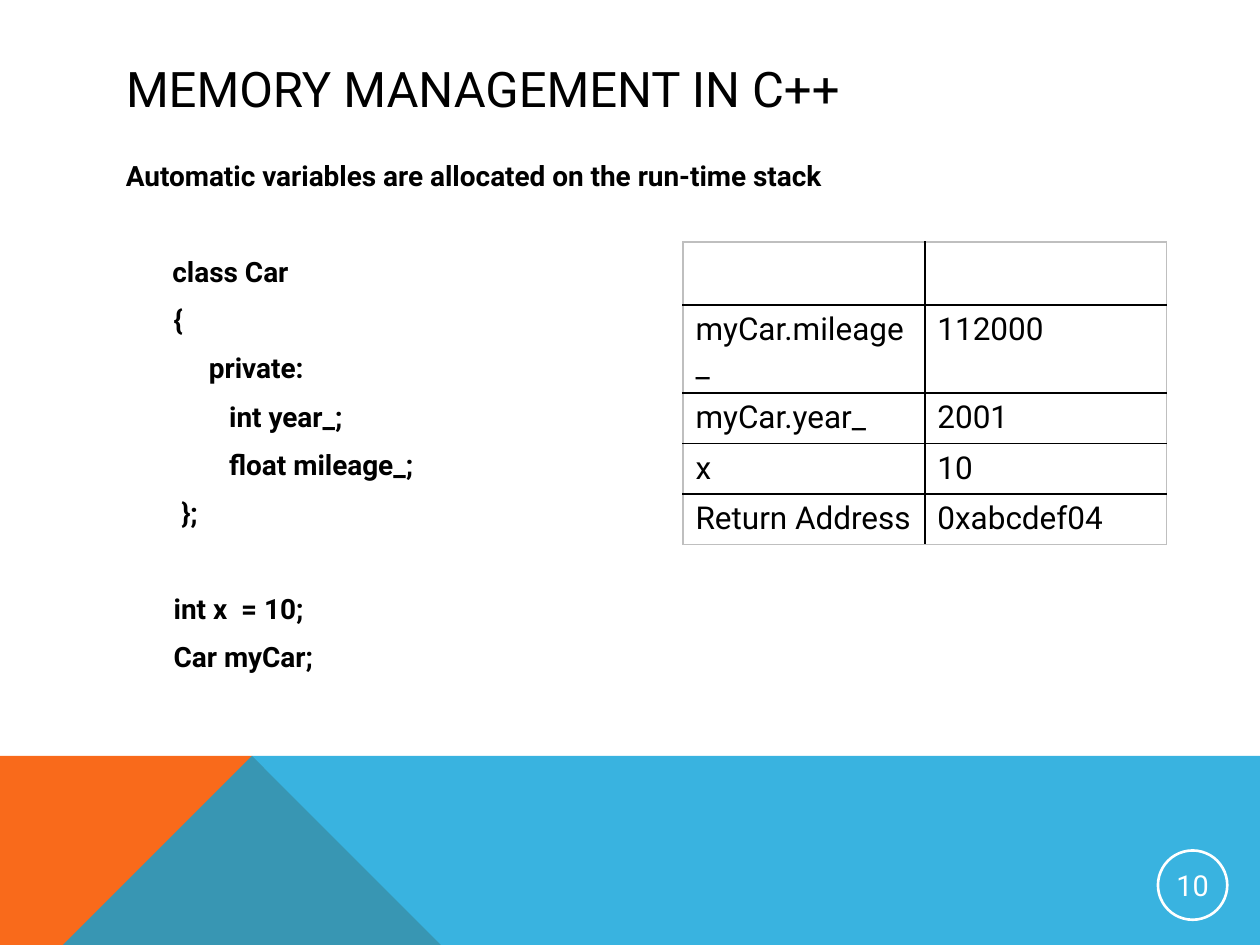
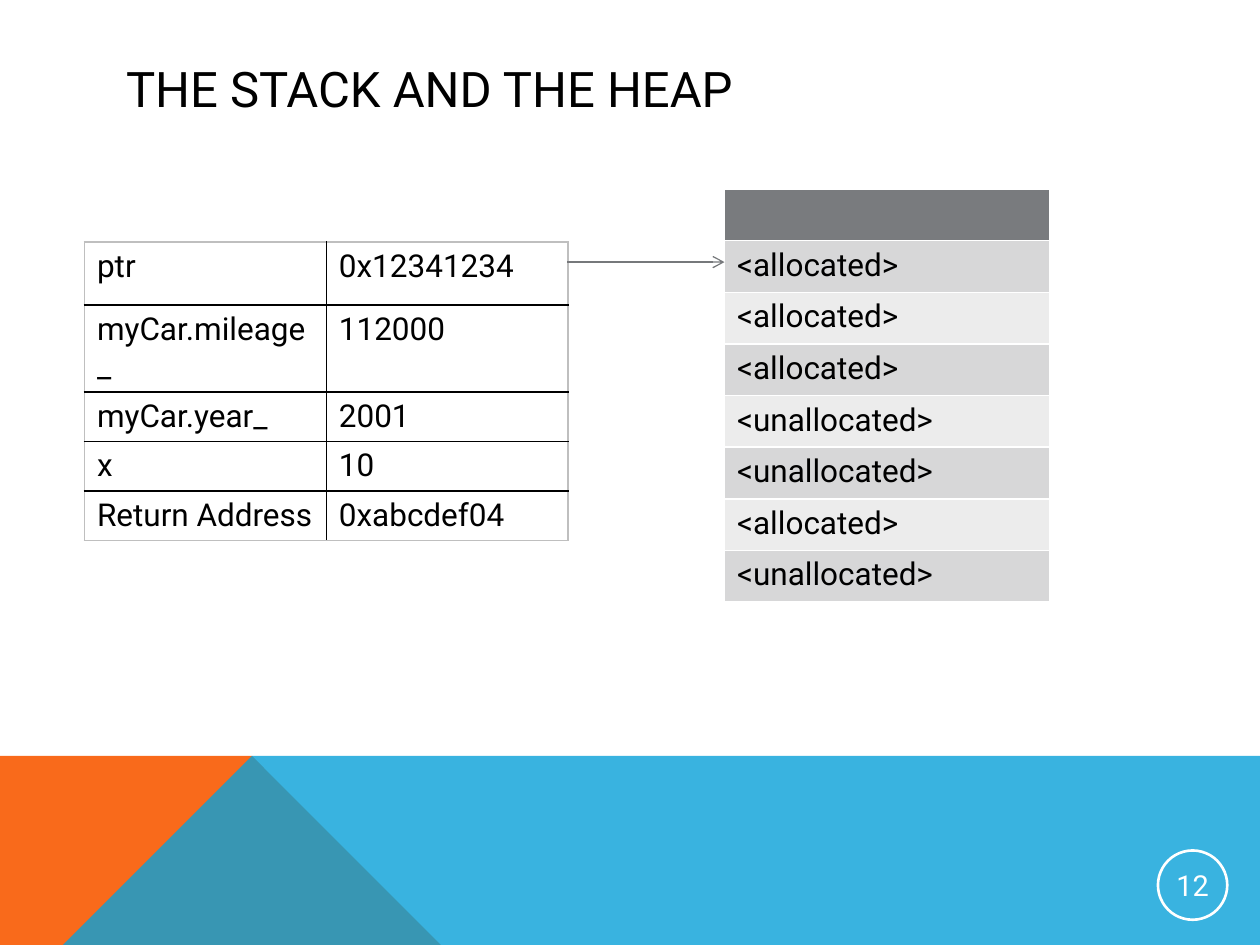
from lxml.etree import SubElement
from pptx import Presentation
from pptx.dml.color import RGBColor
from pptx.enum.shapes import MSO_CONNECTOR, MSO_SHAPE
from pptx.enum.text import MSO_ANCHOR, PP_ALIGN
from pptx.oxml.ns import qn
from pptx.util import Inches, Pt

FONT = "Roboto"
BLACK = RGBColor(0x00, 0x00, 0x00)
WHITE = RGBColor(0xFF, 0xFF, 0xFF)
ORANGE = RGBColor(0xF9, 0x6A, 0x1B)
BLUE = RGBColor(0x08, 0xA1, 0xD9)
FRAME_GRAY = RGBColor(0xBF, 0xBF, 0xBF)
ARROW_GRAY = RGBColor(0x76, 0x78, 0x7B)
HEADER_GRAY = RGBColor(0x79, 0x7B, 0x7E)
DARK_ROW = RGBColor(0xD7, 0xD7, 0xD8)
LIGHT_ROW = RGBColor(0xEC, 0xEC, 0xEC)

BANDS = [
    (ORANGE, 100, [(0, 7.5), (0, 5.52), (2.23, 5.52), (3.91, 7.5)]),
    (BLUE, 80, [(0, 7.5), (2.23, 5.52), (10, 5.53), (10, 7.5)]),
]
CODE_LINES = [
    ("class Car", 0.37, 2),
    ("{", 0.38, 1),
    ("private:", 0.66, 1),
    ("int year_;", 0.82, 1),
    ("float mileage_;", 0.82, 1),
    ("};", 0.44, 1),
    ("int x  = 10;", 0.38, 2),
    ("Car myCar;", 0.38, 1),
]
STACK_FRAME = [
    ("myCar.mileage_", "112000"),
    ("myCar.year_", "2001"),
    ("x", "10"),
    ("Return Address", "0xabcdef04"),
]
STACK_HEIGHTS = [0.5, 0.69, 0.39, 0.39, 0.39]
HEAP = ["", "<allocated>", "<allocated>", "<allocated>", "<unallocated>",
        "<unallocated>", "<allocated>", "<unallocated>"]


def format_runs(paragraph, size, color=BLACK, bold=False):
    for run in paragraph.runs:
        run.font.name = FONT
        run.font.size = Pt(size)
        run.font.color.rgb = color
        run.font.bold = bold


def add_memory_table(slide, left, top, width, heights, rows, fills, inner, outer):
    row_count, column_count = len(rows), len(rows[0])
    table = slide.shapes.add_table(
        row_count, column_count, Inches(left), Inches(top),
        Inches(width * column_count), Inches(sum(heights))).table
    table.first_row = table.horz_banding = False
    for column in table.columns:
        column.width = Inches(width)
    for r, values in enumerate(rows):
        table.rows[r].height = Inches(heights[r])
        for c, value in enumerate(values):
            cell = table.cell(r, c)
            cell.text_frame.text = value
            format_runs(cell.text_frame.paragraphs[0], 18)
            properties = cell._tc.get_or_add_tcPr()
            on_edge = {"lnL": c == 0, "lnR": c == column_count - 1,
                       "lnT": r == 0, "lnB": r == row_count - 1}
            for side, is_outer in on_edge.items():
                line = SubElement(properties, qn(f"a:{side}"), w=str(Pt(1)))
                fill = SubElement(line, qn("a:solidFill"))
                SubElement(fill, qn("a:srgbClr"), val=str(outer if is_outer else inner))
            if fills:
                cell.fill.solid()
                cell.fill.fore_color.rgb = fills[r]
            else:
                cell.fill.background()


presentation = Presentation()
presentation.slide_width = Inches(10)
presentation.slide_height = Inches(7.5)

slides = []
for title_text, number in [("MEMORY MANAGEMENT IN C++", "10"),
                           ("THE STACK AND THE HEAP", "12")]:
    slide = presentation.slides.add_slide(presentation.slide_layouts[5])
    slides.append(slide)

    for color, opacity, points in BANDS:
        builder = slide.shapes.build_freeform(*points[0], scale=Inches(1))
        builder.add_line_segments(points[1:], close=True)
        band = builder.convert_to_shape()
        band.shadow.inherit = False
        band.line.fill.background()
        band.fill.solid()
        band.fill.fore_color.rgb = color
        if opacity < 100:
            color_element = band._element.spPr.find(qn("a:solidFill"))[0]
            SubElement(color_element, qn("a:alpha"), val=str(opacity * 1000))

    title = slide.shapes.title
    title.left, title.top = Inches(0.9), Inches(0.4)
    title.width, title.height = Inches(8.22), Inches(0.6)
    title.text_frame.text = title_text
    title.text_frame.vertical_anchor = MSO_ANCHOR.MIDDLE
    title.text_frame.paragraphs[0].alignment = PP_ALIGN.LEFT
    format_runs(title.text_frame.paragraphs[0], 28)

    badge = slide.shapes.add_shape(
        MSO_SHAPE.OVAL, Inches(9.19), Inches(6.75), Inches(0.55), Inches(0.55))
    badge.shadow.inherit = False
    badge.fill.background()
    badge.line.color.rgb = WHITE
    badge.line.width = Pt(1.5)
    frame = badge.text_frame
    frame.margin_left = frame.margin_right = Inches(0.01)
    frame.margin_top = frame.margin_bottom = Inches(0.01)
    frame.vertical_anchor = MSO_ANCHOR.MIDDLE
    frame.word_wrap = False
    frame.text = number
    frame.paragraphs[0].alignment = PP_ALIGN.CENTER
    format_runs(frame.paragraphs[0], 16.5, WHITE)

variables_slide, heap_slide = slides

code_box = variables_slide.shapes.add_textbox(
    Inches(0.9), Inches(1.21), Inches(8.22), Inches(4.3))
frame = code_box.text_frame
frame.word_wrap = True
frame.text = "Automatic variables are allocated on the run-time stack"
format_runs(frame.paragraphs[0], 16, bold=True)
for text, indent, line_step in CODE_LINES:
    paragraph = frame.add_paragraph()
    paragraph.text = text
    paragraph.space_before = Pt(8.4 + 27.1 * (line_step - 1))
    paragraph._p.get_or_add_pPr().set("marL", str(Inches(indent)))
    format_runs(paragraph, 16, bold=True)

for slide, left, top_row in [(variables_slide, 5.42, ("", "")),
                             (heap_slide, 0.67, ("ptr", "0x12341234"))]:
    add_memory_table(slide, left, 1.92, 1.92, STACK_HEIGHTS,
                     [top_row] + STACK_FRAME, None, BLACK, FRAME_GRAY)

heap_fills = [HEADER_GRAY] + [LIGHT_ROW if i % 2 else DARK_ROW
                              for i in range(len(HEAP) - 1)]
add_memory_table(heap_slide, 5.75, 1.5, 2.58, [0.41] * len(HEAP),
                 [(value,) for value in HEAP], heap_fills, WHITE, WHITE)

pointer = heap_slide.shapes.add_connector(
    MSO_CONNECTOR.STRAIGHT, Inches(4.5), Inches(2.08), Inches(5.75), Inches(2.08))
pointer.line.color.rgb = ARROW_GRAY
pointer.line.width = Pt(0.75)
SubElement(pointer.line._get_or_add_ln(), qn("a:tailEnd"), type="arrow")
SubElement(pointer._element.spPr, qn("a:effectLst"))

presentation.save("out.pptx")
